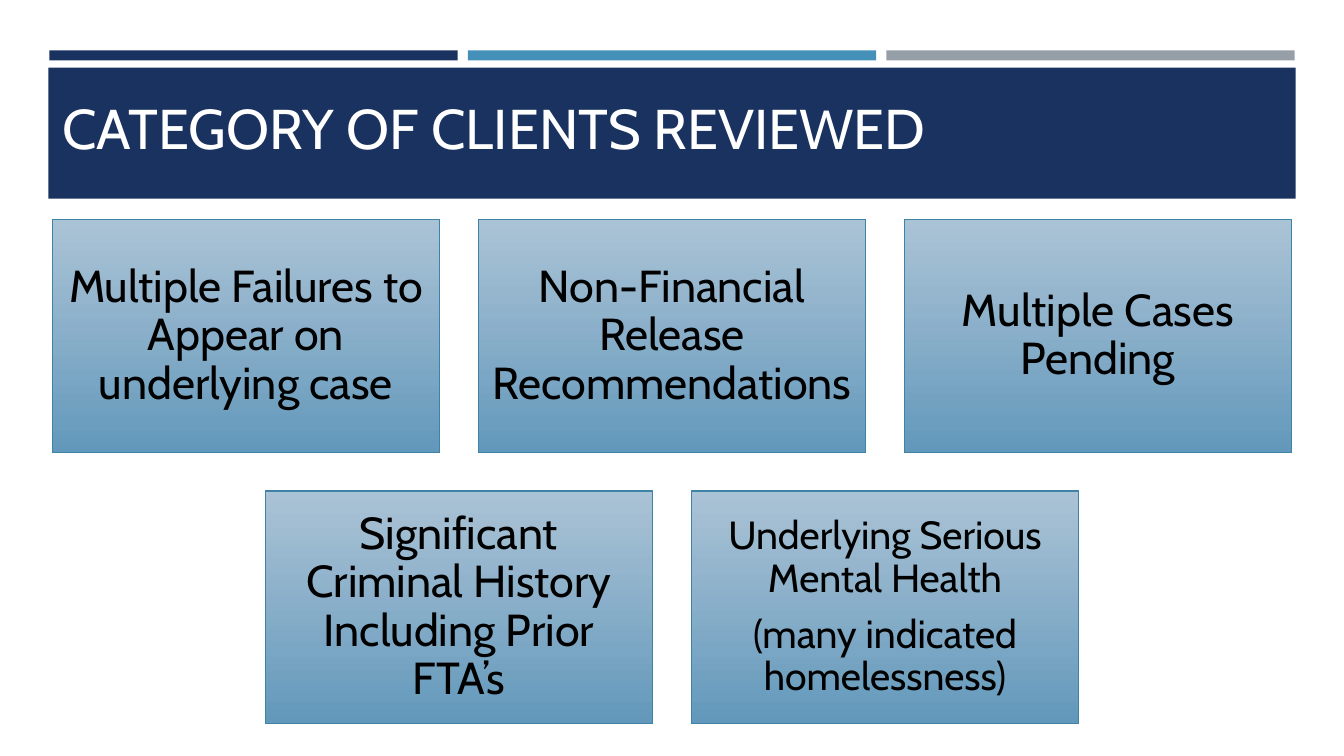
from lxml import etree
from pptx import Presentation
from pptx import util as u
from pptx.dml.color import RGBColor
from pptx.enum import shapes, text
from pptx.oxml.ns import qn

NAVY, BLUE, GREY = "1A3260", "4590B8", "969FA7"
CARD_TOP, CARD_BOTTOM, CARD_EDGE = "A2BDD2", "6399BC", "3E82A6"


def color(value):
    return RGBColor.from_string(value)


def add_block(left, top, width, height, fill):
    block = page.shapes.add_shape(
        shapes.MSO_SHAPE.RECTANGLE,
        u.Inches(left), u.Inches(top), u.Inches(width), u.Inches(height))
    block.shadow.inherit = False
    block.line.fill.background()
    block.fill.solid()
    block.fill.fore_color.rgb = color(fill)
    return block


deck = Presentation()
deck.slide_width, deck.slide_height = u.Inches(13.33), u.Inches(7.5)
page = deck.slides.add_slide(deck.slide_layouts[5])

# Header: three thin bars above a wide band
for column, fill in enumerate((NAVY, BLUE, GREY)):
    add_block(0.49 + 4.15 * column, 0.5, 4.05, 0.1, fill)
add_block(0.48, 0.67, 12.37, 1.3, NAVY)

# Title, brought in front of the band
title = page.shapes.title
title_place = {"left": 0.52, "top": 0.88, "width": 12.12, "height": 0.77}
for name, value in title_place.items():
    setattr(title, name, u.Inches(value))
title.text_frame.text = "CATEGORY OF CLIENTS REVIEWED"
title.text_frame.vertical_anchor = text.MSO_ANCHOR.MIDDLE
para = title.text_frame.paragraphs[0]
para.alignment = text.PP_ALIGN.LEFT
for name, value in {"name": "Cabin", "size": u.Pt(40)}.items():
    setattr(para.font, name, value)
para.font.color.rgb = color("FFFFFF")
page.shapes._spTree.append(title._element)

# Client categories: rows of cards, each row centred on the slide
card_width, card_height, gap = 3.84, 2.31, 0.385
rows = [
    [(32, ["Multiple Failures to Appear on underlying case"]),
     (32, ["Non-Financial Release Recommendations"]),
     (32, ["Multiple Cases Pending"])],
    [(32, ["Significant Criminal History Including Prior FTA’s"]),
     (28, ["Underlying Serious Mental Health", "(many indicated homelessness)"])],
]
for row, cards in enumerate(rows):
    row_width = len(cards) * (card_width + gap) - gap
    row_left = (13.33 - row_width) / 2
    for column, (size, lines) in enumerate(cards):
        card = add_block(row_left + column * (card_width + gap), 2.18 + 2.69 * row,
                         card_width, card_height, CARD_TOP)
        card.line.color.rgb = color(CARD_EDGE)
        card.line.width = u.Pt(1)

        card.fill.gradient()
        card.fill.gradient_angle = 270
        for stop, value in zip(card.fill.gradient_stops, (CARD_TOP, CARD_BOTTOM)):
            stop.color.rgb = color(value)
        top_color = card._element.spPr.find(".//" + qn("a:srgbClr"))
        etree.SubElement(top_color, qn("a:alpha"), val="90000")

        frame = card.text_frame
        frame.word_wrap = True
        frame.vertical_anchor = text.MSO_ANCHOR.MIDDLE
        for side in ("left", "right", "top", "bottom"):
            setattr(frame, f"margin_{side}", u.Inches(0.13))
        frame.text = "\n".join(lines)
        para_format = {"alignment": text.PP_ALIGN.CENTER, "line_spacing": 0.9,
                       "space_after": u.Pt(0.35 * size)}
        for para in frame.paragraphs:
            for name, value in para_format.items():
                setattr(para, name, value)
            for name, value in {"name": "Cabin", "size": u.Pt(size)}.items():
                setattr(para.font, name, value)
            para.font.color.rgb = color("000000")

deck.save("out.pptx")
